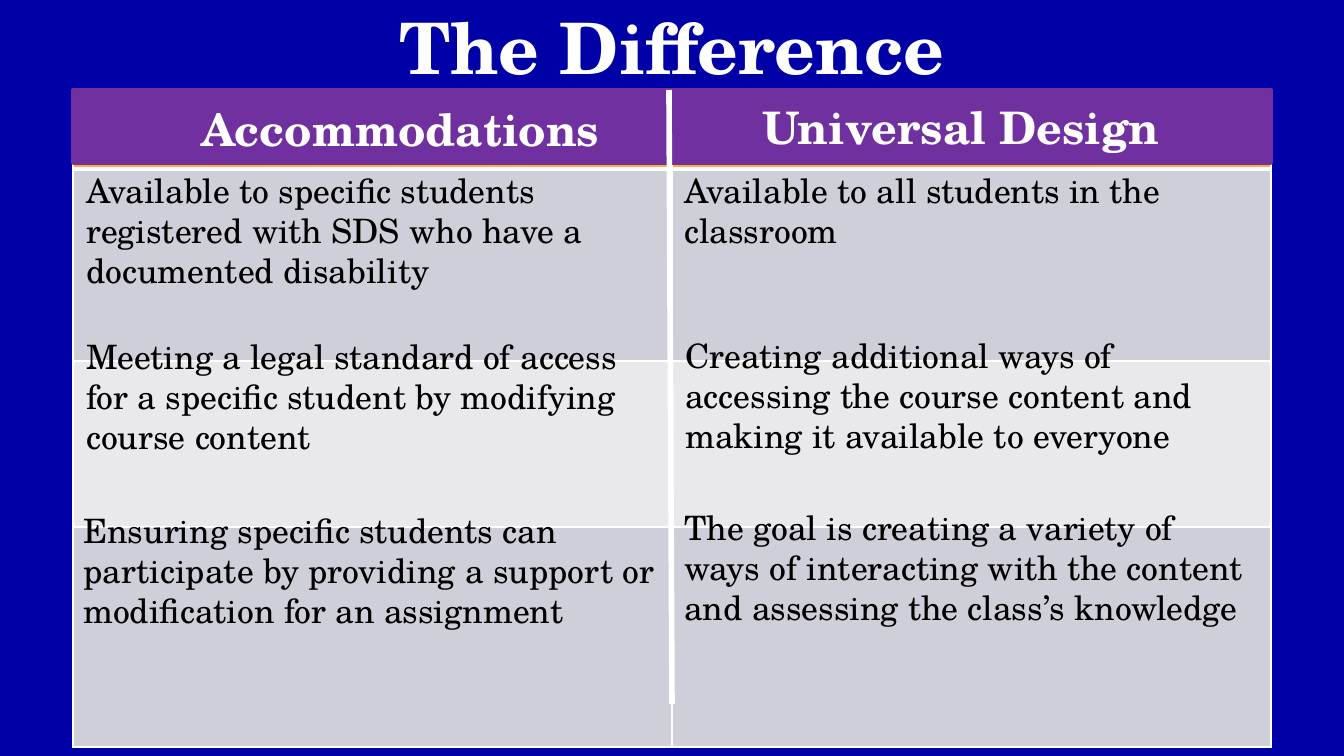
from lxml import etree
from pptx import Presentation
from pptx.dml.color import RGBColor
from pptx.enum.shapes import MSO_CONNECTOR, MSO_SHAPE
from pptx.enum.text import MSO_ANCHOR, MSO_AUTO_SIZE, PP_ALIGN
from pptx.oxml.ns import qn
from pptx.util import Pt

EMU_PER_PX = 914400 / 134.4
FONT = "TeX Gyre Schola"
STRAIGHT = MSO_CONNECTOR.STRAIGHT
RECTANGLE = MSO_SHAPE.RECTANGLE
BOTTOM = MSO_ANCHOR.BOTTOM
NO_FIT = MSO_AUTO_SIZE.NONE
GROW = MSO_AUTO_SIZE.SHAPE_TO_FIT_TEXT
CENTER = PP_ALIGN.CENTER

NAVY = RGBColor(0x00, 0x00, 0xA7)
PURPLE = RGBColor(0x70, 0x30, 0xA0)
ORANGE = RGBColor(0xFF, 0xAB, 0x40)
DARK_BAND = RGBColor(0xCF, 0xCF, 0xD9)
LIGHT_BAND = RGBColor(0xE9, 0xE9, 0xED)
WHITE = RGBColor(0xFF, 0xFF, 0xFF)
BLACK = RGBColor(0x00, 0x00, 0x00)


def px(length):
    return round(length * EMU_PER_PX)


class SlideBuilder:
    def __init__(self, slide):
        self.slide = slide

    def background(self, color):
        fill = self.slide.background.fill
        fill.solid()
        fill.fore_color.rgb = color

    def set_text(self, text_frame, text, size, color, bold=False):
        text_frame.text = text
        font = text_frame.paragraphs[0].runs[0].font
        font.name, font.size, font.bold = FONT, Pt(size), bold
        font.color.rgb = color

    def title(self, box, text):
        shape = self.slide.shapes.title
        shape.left, shape.top, shape.width, shape.height = map(px, box)
        text_frame = shape.text_frame
        text_frame.margin_left = text_frame.margin_right = px(13)
        text_frame.margin_top = text_frame.margin_bottom = px(13)
        text_frame.vertical_anchor = BOTTOM
        text_frame.auto_size = NO_FIT
        text_frame.word_wrap = True
        self.set_text(text_frame, text, 38, WHITE, bold=True)
        text_frame.paragraphs[0].alignment = CENTER

    def text(self, box, text, size, color, bold=False):
        text_frame = self.slide.shapes.add_textbox(*map(px, box)).text_frame
        text_frame.word_wrap = True
        text_frame.auto_size = GROW
        self.set_text(text_frame, text, size, color, bold)

    def rectangle(self, box, color):
        shape = self.slide.shapes.add_shape(RECTANGLE, *map(px, box))
        shape.shadow.inherit = False
        shape.fill.solid()
        shape.fill.fore_color.rgb = color
        shape.line.color.rgb = color
        shape.line.width = Pt(2)

    def line(self, start, end, color, width):
        connector = self.slide.shapes.add_connector(STRAIGHT, *map(px, start + end))
        connector.line.color.rgb = color
        connector.line.width = Pt(width)
        etree.SubElement(connector._element.spPr, qn("a:effectLst"))

    def cell_borders(self, cell, color, widths):
        properties = cell._tc.get_or_add_tcPr()
        for index, (side, width) in enumerate(widths.items()):
            border = etree.Element(qn(f"a:ln{side}"), w=str(Pt(width)))
            fill = etree.SubElement(border, qn("a:solidFill"))
            etree.SubElement(fill, qn("a:srgbClr"), val=str(color))
            properties.insert(index, border)

    def banded_table(self, left, top, column_width, row_heights, row_colors):
        frame = self.slide.shapes.add_table(
            len(row_heights), 2, px(left), px(top),
            px(2 * column_width), px(sum(row_heights)))
        table = frame.table
        for column in table.columns:
            column.width = px(column_width)
        for index, (row, height, color) in enumerate(
                zip(table.rows, row_heights, row_colors)):
            row.height = px(height)
            for cell in row.cells:
                cell.fill.solid()
                cell.fill.fore_color.rgb = color
                self.cell_borders(cell, WHITE, {
                    "L": 1, "R": 1,
                    "T": 3 if index == 1 else 1,
                    "B": 3 if index == 0 else 1})


def main():
    presentation = Presentation()
    presentation.slide_width, presentation.slide_height = px(1344), px(756)
    builder = SlideBuilder(presentation.slides.add_slide(presentation.slide_layouts[5]))
    builder.background(NAVY)

    # Table grid and header band
    builder.banded_table(73, 90, 599, [79, 192, 166, 220],
                         [ORANGE, DARK_BAND, LIGHT_BAND, DARK_BAND])
    builder.rectangle((73, 90, 1198, 73), PURPLE)
    builder.title((46, -199, 1252, 301), "The Difference")

    # Each column: header box position and text, then body text positions
    columns = [
        ((188, 95), "Accommodations", [
            ((73, 163), "Available to specific students registered with SDS "
                        "who have a documented disability"),
            ((73, 329), "Meeting a legal standard of access for a specific "
                        "student by modifying course content"),
            ((70, 503), "Ensuring specific students can participate by providing "
                        "a support or modification for an assignment"),
        ]),
        ((749, 93), "Universal Design", [
            ((671, 163), "Available to all students in the classroom"),
            ((672, 328), "Creating additional ways of accessing the course "
                         "content and making it available to everyone"),
            ((671, 500), "The goal is creating a variety of ways of interacting "
                         "with the content and assessing the class’s knowledge"),
        ]),
    ]
    for header_position, header, entries in columns:
        builder.text(header_position + (478, 67), header, 24, WHITE, bold=True)
        for position, entry in entries:
            builder.text(position + (600, 136), entry, 18, BLACK)

    # Column divider
    builder.line((669, 90), (672, 704), WHITE, 3)

    presentation.save("out.pptx")


if __name__ == "__main__":
    main()
